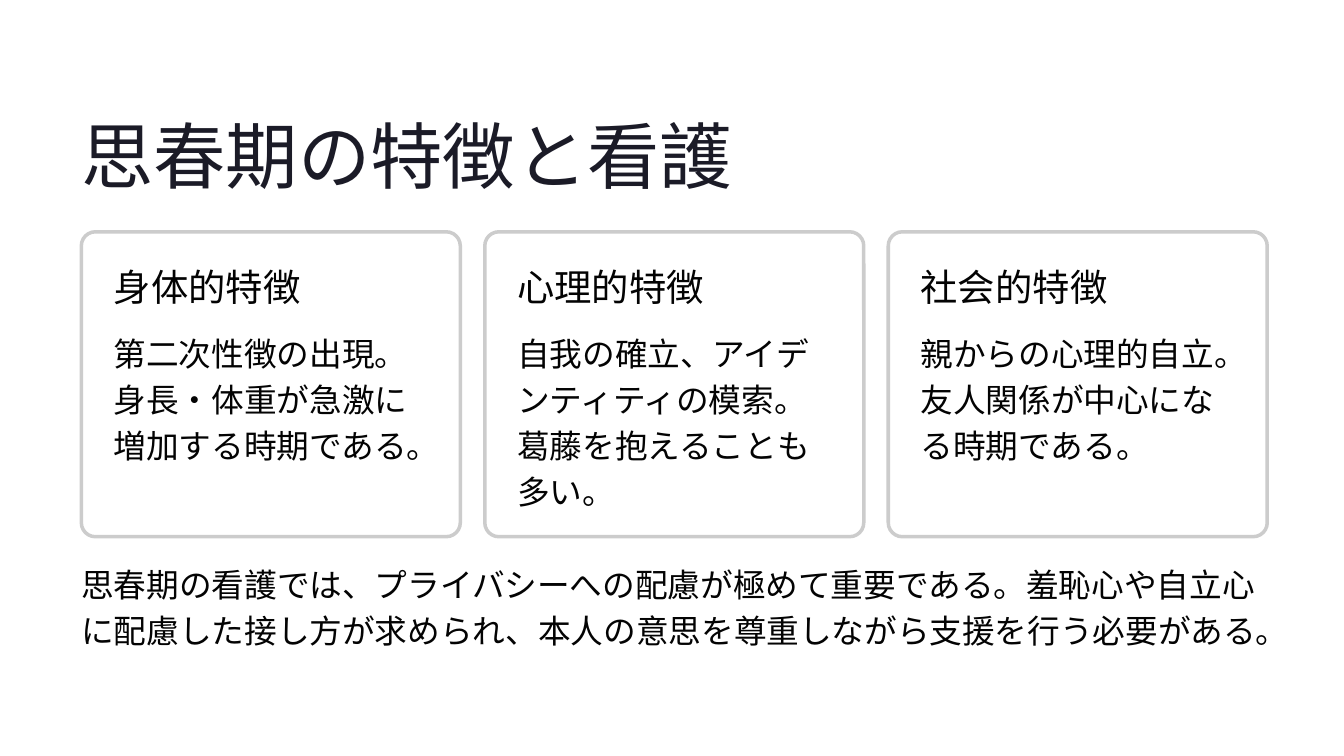
from dataclasses import dataclass

from lxml import etree
from pptx import Presentation
from pptx.dml.color import RGBColor
from pptx.enum.shapes import MSO_SHAPE
from pptx.enum.text import MSO_ANCHOR
from pptx.oxml.ns import qn
from pptx.slide import Slide
from pptx.util import Cm, Pt

ROUNDED = MSO_SHAPE.ROUNDED_RECTANGLE
TOP = MSO_ANCHOR.TOP

MARGIN = 2.46
CARD_TOP, CARD_WIDTH, CARD_HEIGHT = 7.01, 11.46, 9.22
CARD_PITCH = 12.2
CARD_PADDING = 0.98


@dataclass(frozen=True)
class TextStyle:
    font: str
    size: float
    line_spacing: float
    color: str
    wrap: bool


@dataclass(frozen=True)
class Feature:
    heading: str
    description: str


TITLE = TextStyle("Inter", 62, 77.5, "1B1B27", False)
HEADING = TextStyle("Inter", 32, 38.5, "030303", False)
BODY = TextStyle("Roboto", 28, 39.5, "030303", True)

FEATURES = [
    Feature("身体的特徴", "第二次性徴の出現。身長・体重が急激に増加する時期である。"),
    Feature("心理的特徴", "自我の確立、アイデンティティの模索。葛藤を抱えることも多い。"),
    Feature("社会的特徴", "親からの心理的自立。友人関係が中心になる時期である。"),
]
NURSING_NOTE = (
    "思春期の看護では、プライバシーへの配慮が極めて重要である。"
    "羞恥心や自立心に配慮した接し方が求められ、"
    "本人の意思を尊重しながら支援を行う必要がある。"
)


def rgb(value: str) -> RGBColor:
    return RGBColor.from_string(value)


def add_text(page: Slide, text: str, style: TextStyle,
             left: float, top: float, width: float, height: float) -> None:
    box = page.shapes.add_textbox(Cm(left), Cm(top), Cm(width), Cm(height))
    frame = box.text_frame
    frame.margin_left = frame.margin_right = 0
    frame.margin_top = frame.margin_bottom = 0
    frame.vertical_anchor = TOP
    frame.word_wrap = style.wrap
    para = frame.paragraphs[0]
    para.text = text
    para.line_spacing = Pt(style.line_spacing)
    para.font.name = style.font
    para.font.size = Pt(style.size)
    para.font.color.rgb = rgb(style.color)


def add_card(page: Slide, feature: Feature, left: float) -> None:
    card = page.shapes.add_shape(
        ROUNDED, Cm(left), Cm(CARD_TOP), Cm(CARD_WIDTH), Cm(CARD_HEIGHT))
    card.adjustments[0] = 0.046
    card.shadow.inherit = False
    card.fill.solid()
    card.fill.fore_color.rgb = rgb("FFFFFF")
    fill_color = card.element.spPr.find(qn("a:solidFill"))[0]
    etree.SubElement(fill_color, qn("a:alpha"), val="95000")
    card.line.color.rgb = rgb("CCCCCC")
    card.line.width = Pt(3)

    text_left = left + CARD_PADDING
    text_width = CARD_WIDTH - 2 * CARD_PADDING
    add_text(page, feature.heading, HEADING, text_left, 7.98, text_width, 1.57)
    add_text(page, feature.description, BODY, text_left, 9.88, text_width, 4.8)


def main() -> None:
    deck = Presentation()
    deck.slide_width, deck.slide_height = Cm(40.64), Cm(22.86)
    page = deck.slides.add_slide(deck.slide_layouts[6])
    add_text(page, "思春期の特徴と看護", TITLE, MARGIN, 3.25, 21.89, 2.74)
    for index, feature in enumerate(FEATURES):
        add_card(page, feature, MARGIN + index * CARD_PITCH)
    add_text(page, NURSING_NOTE, BODY, MARGIN, 16.87, 36.14, 3.2)
    deck.save("out.pptx")


if __name__ == "__main__":
    main()
